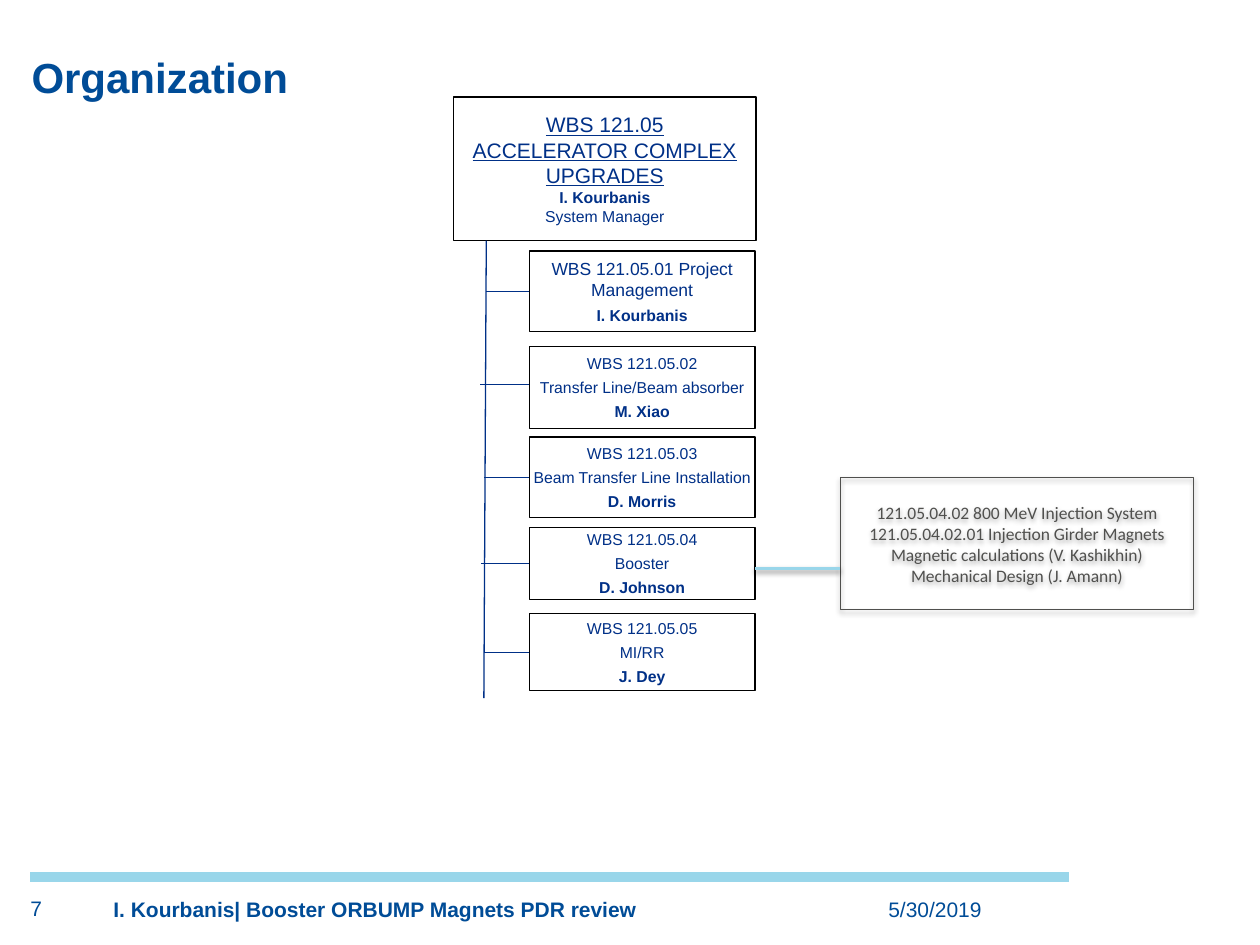
"""Build the organization slide of the accelerator upgrades review."""
from dataclasses import dataclass
from typing import Optional

from lxml.etree import SubElement
from pptx import Presentation
from pptx.dml.color import RGBColor as Color
from pptx.enum.shapes import MSO_CONNECTOR as Connector, MSO_SHAPE as Preset
from pptx.enum.text import MSO_ANCHOR as Anchor, PP_ALIGN as Align
from pptx.oxml.ns import qn
from pptx.util import Pt


@dataclass(frozen=True)
class Theme:
    heading: Color = Color(0x00, 0x4C, 0x97)
    label: Color = Color(0x00, 0x30, 0x87)
    detail: Color = Color(0x50, 0x50, 0x4E)
    accent: Color = Color(0x99, 0xD6, 0xEA)
    outline: Color = Color(0, 0, 0)
    font: str = "Arial"
    detail_font: str = "Calibri"
    title_size: float = 24
    large: float = 12
    medium: float = 10
    small: float = 9
    thin: float = 0.75


THEME = Theme()


@dataclass(frozen=True)
class Frame:
    left: float
    top: float
    width: float
    height: float


@dataclass(frozen=True)
class Line:
    text: str
    size: float = THEME.small
    bold: bool = False
    underline: bool = False
    font: str = THEME.font
    color: Color = THEME.label


@dataclass(frozen=True)
class Shadow:
    blur: float
    distance: float
    opacity: int


@dataclass(frozen=True)
class Unit:
    top: float
    height: float
    branch_left: float
    lines: tuple[Line, ...]
    branch_y: Optional[float] = None


UNIT_LEFT, UNIT_WIDTH = 302.4, 129
DETAIL = {"size": THEME.medium, "font": THEME.detail_font, "color": THEME.detail}
HEADING = {"color": THEME.heading}

SYSTEM = (
    Line("WBS 121.05", THEME.large, underline=True),
    Line("ACCELERATOR COMPLEX UPGRADES", THEME.large, underline=True),
    Line("I. Kourbanis", bold=True),
    Line("System Manager"),
)
UNITS = (
    Unit(143.5, 46, 277.9, (
        Line("WBS 121.05.01 Project Management", THEME.medium),
        Line("I. Kourbanis", bold=True))),
    Unit(198, 46.8, 274.3, (
        Line("WBS 121.05.02"), Line("Transfer Line/Beam absorber"),
        Line("M. Xiao", bold=True)), branch_y=219.6),
    Unit(249.8, 46, 276.5, (
        Line("WBS 121.05.03"), Line("Beam Transfer Line Installation"),
        Line("D. Morris", bold=True))),
    Unit(301.5, 41, 275, (
        Line("WBS 121.05.04"), Line("Booster"), Line("D. Johnson", bold=True))),
    Unit(350.8, 44, 276.5, (
        Line("WBS 121.05.05"), Line("MI/RR"), Line("J. Dey", bold=True))),
)
INJECTION = tuple(Line(text, **DETAIL) for text in (
    "121.05.04.02 800 MeV Injection System",
    "121.05.04.02.01 Injection Girder Magnets",
    "Magnetic calculations (V. Kashikhin)",
    "Mechanical Design (J. Amann)",
))
CAPTIONS = (
    (Frame(18, 8, 682.5, 50.4), Anchor.BOTTOM,
     Line("Organization", THEME.title_size, bold=True, **HEADING)),
    (Frame(507.6, 512.6, 85, 18.7), Anchor.TOP,
     Line("5/30/2019", THEME.large, **HEADING)),
    (Frame(17.3, 512, 32.4, 18.7), Anchor.TOP, Line("7", THEME.large, **HEADING)),
    (Frame(64.8, 512.6, 349.2, 18.7), Anchor.TOP,
     Line("I. Kourbanis| Booster ORBUMP Magnets PDR review", THEME.large,
          bold=True, **HEADING)),
)


def write(shape, lines: tuple[Line, ...], anchor, align, gap: float = 0,
          insets: tuple[float, float] = (0, 0)) -> None:
    """Fill a shape with formatted paragraphs."""
    frame = shape.text_frame
    frame.text = "\n".join(line.text for line in lines)
    frame.word_wrap = True
    frame.vertical_anchor = anchor
    frame.margin_left = frame.margin_right = Pt(insets[0])
    frame.margin_top = frame.margin_bottom = Pt(insets[1])
    for index, (para, line) in enumerate(zip(frame.paragraphs, lines)):
        para.alignment = align
        para.space_before = Pt(gap if index else 0)
        for span in para.runs:
            font = span.font
            font.name, font.size = line.font, Pt(line.size)
            font.bold, font.underline = line.bold, line.underline
            font.color.rgb = line.color


def cast(effects, shadow: Shadow) -> None:
    """Add a downward black shadow to an effect list."""
    outer = SubElement(effects, qn("a:outerShdw"), {
        "blurRad": str(Pt(shadow.blur)), "dist": str(Pt(shadow.distance)),
        "dir": "5400000", "rotWithShape": "0"})
    black = SubElement(outer, qn("a:srgbClr"), val="000000")
    SubElement(black, qn("a:alpha"), val=str(shadow.opacity * 1000))


def add_caption(page, place: Frame, anchor, line: Line) -> None:
    """Add a single line of free text."""
    box = page.shapes.add_textbox(
        Pt(place.left), Pt(place.top), Pt(place.width), Pt(place.height))
    write(box, (line,), anchor, Align.LEFT)


def add_box(page, place: Frame, lines: tuple[Line, ...], outline: Color = THEME.outline,
            gap: float = 0, insets: tuple[float, float] = (0, 0),
            shadow: Optional[Shadow] = None):
    """Add an outlined rectangle with centred text."""
    box = page.shapes.add_shape(
        Preset.RECTANGLE, Pt(place.left), Pt(place.top), Pt(place.width), Pt(place.height))
    box.fill.background()
    box.line.color.rgb, box.line.width = outline, Pt(THEME.thin)
    box.shadow.inherit = False
    if shadow:
        cast(box._element.spPr.find(qn("a:effectLst")), shadow)
    write(box, lines, Anchor.MIDDLE, Align.CENTER, gap, insets)
    return box


def add_line(page, start: tuple[float, float], end: tuple[float, float],
             color: Color = THEME.label, width: float = THEME.thin,
             shadow: Optional[Shadow] = None):
    """Add a straight connector."""
    line = page.shapes.add_connector(
        Connector.STRAIGHT, Pt(start[0]), Pt(start[1]), Pt(end[0]), Pt(end[1]))
    line.line.color.rgb, line.line.width = color, Pt(width)
    effects = SubElement(line._element.spPr, qn("a:effectLst"))
    if shadow:
        cast(effects, shadow)
    return line


def add_unit(page, unit: Unit) -> None:
    """Add a work unit and its branch to the trunk."""
    box = add_box(page, Frame(UNIT_LEFT, unit.top, UNIT_WIDTH, unit.height),
                  unit.lines, gap=3)
    level = unit.branch_y or unit.top + unit.height / 2
    branch = add_line(page, (UNIT_LEFT, level), (unit.branch_left, level))
    if unit.branch_y is None:
        branch.begin_connect(box, 1)


def main() -> None:
    """Build and save the deck."""
    deck = Presentation()
    deck.slide_width, deck.slide_height = Pt(720), Pt(540)
    page = deck.slides.add_slide(deck.slide_layouts[6])
    add_line(page, (17.3, 501.1), (610.6, 501.1), THEME.accent, 6)
    for place, anchor, line in CAPTIONS:
        add_caption(page, place, anchor, line)
    add_box(page, Frame(259.2, 55.4, 172.8, 82.1), SYSTEM)
    add_line(page, (276.5, 398.9), (277.9, 137.5))
    for unit in UNITS:
        add_unit(page, unit)
    add_box(page, Frame(480.3, 272.9, 201.6, 75.6), INJECTION, THEME.detail,
            insets=(7.2, 3.6), shadow=Shadow(3.1, 1.8, 35))
    add_line(page, (431.3, 324.9), (480.3, 324.9), THEME.accent, 2, Shadow(3.1, 1.6, 38))
    deck.save("out.pptx")


if __name__ == "__main__":
    main()
